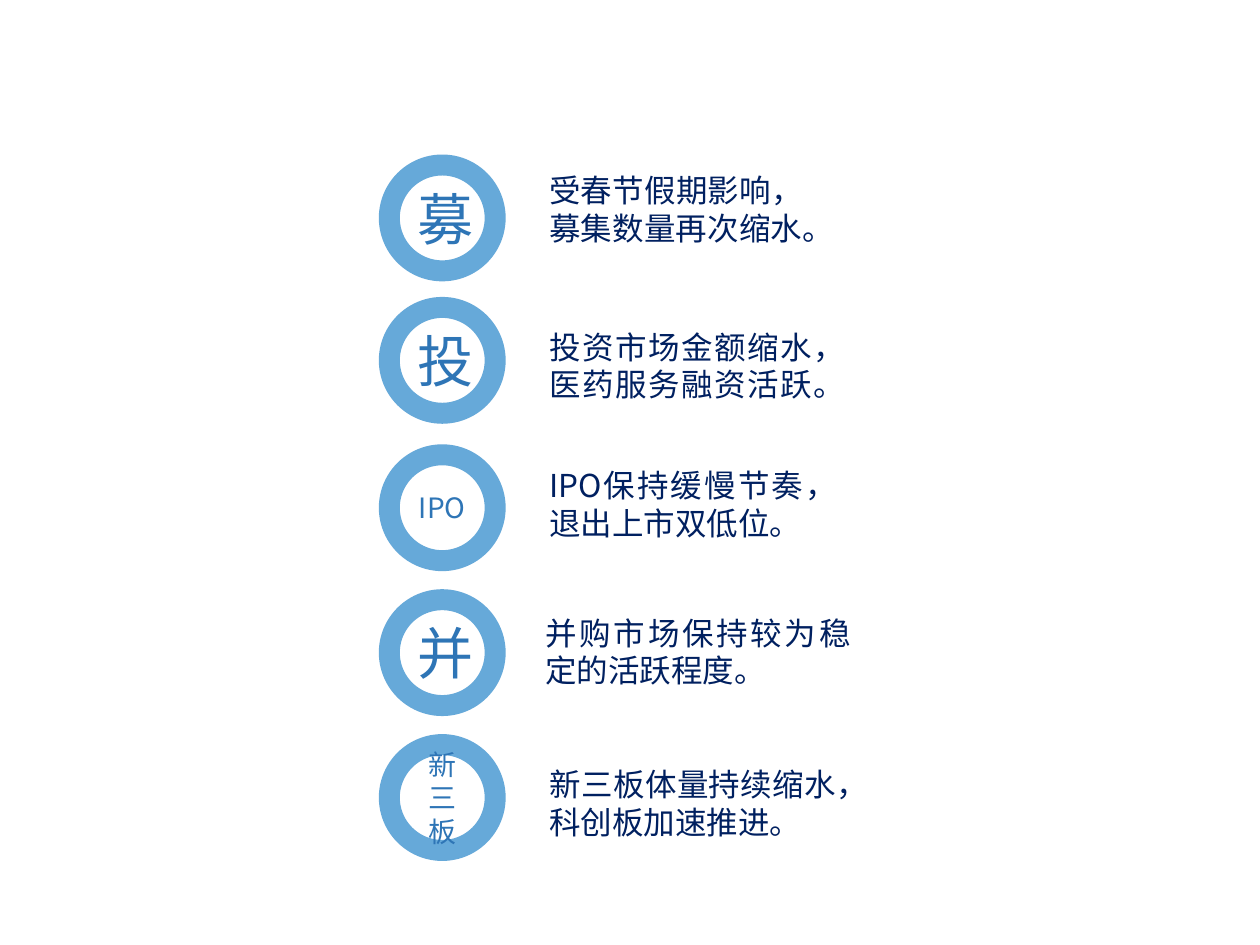
from dataclasses import dataclass

from lxml.etree import SubElement
from pptx import Presentation
from pptx.dml.color import RGBColor
from pptx.enum.lang import MSO_LANGUAGE_ID
from pptx.enum.shapes import MSO_SHAPE
from pptx.enum.text import MSO_ANCHOR, MSO_AUTO_SIZE, PP_ALIGN
from pptx.oxml.ns import qn
from pptx.util import Inches, Pt


@dataclass(frozen=True)
class Theme:
    ring: RGBColor = RGBColor(0x00, 0x70, 0xC0)
    ring_opacity: int = 60
    ring_width: int = 12
    label: RGBColor = RGBColor(0x2E, 0x75, 0xB6)
    label_font: str = "Noto Sans CJK JP"
    label_size: int = 32
    word_size: int = 16
    body: RGBColor = RGBColor(0x00, 0x20, 0x60)
    body_font: str = "Noto Sans CJK SC"
    body_size: int = 18


THEME = Theme()
RING_LEFT, RING_SIZE = 3.09, 0.84
NOTE_HEIGHT = 0.71

# label, ring top, note, note left, note top, note width
TOPICS = [
    ("募", 1.31, "受春节假期影响，募集数量再次缩水。", 4.26, 1.31, 2.21),
    ("投", 2.44, "投资市场金额缩水，医药服务融资活跃。", 4.26, 2.55, 2.3),
    ("IPO", 3.61, "IPO保持缓慢节奏，退出上市双低位。", 4.26, 3.65, 2.48),
    ("并", 4.76, "并购市场保持较为稳定的活跃程度。", 4.23, 4.82, 2.62),
    ("新三板", 5.91, "新三板体量持续缩水，科创板加速推进。", 4.26, 6.02, 2.48),
]


def write(tf, text, font, size, color, align):
    """Fill the frame with one run, using the font for Latin and Chinese."""
    tf.word_wrap = True
    p = tf.paragraphs[0]
    p.alignment = align
    r = p.add_run()
    r.text = text
    r.font.name = font
    r.font.size = Pt(size)
    r.font.color.rgb = color
    r.font.language_id = MSO_LANGUAGE_ID.SIMPLIFIED_CHINESE
    SubElement(r.font._element, qn("a:ea"), typeface=font)


def add_ring(s, label, top):
    sp = s.shapes.add_shape(MSO_SHAPE.OVAL, Inches(RING_LEFT), Inches(top),
                            Inches(RING_SIZE), Inches(RING_SIZE))
    sp.shadow.inherit = False
    sp.fill.background()
    sp.line.width = Pt(THEME.ring_width)
    sp.line.color.rgb = THEME.ring
    color = sp.line._ln.find(".//" + qn("a:srgbClr"))
    SubElement(color, qn("a:alpha"), val=str(THEME.ring_opacity * 1000))
    sp.text_frame.vertical_anchor = MSO_ANCHOR.MIDDLE
    size = THEME.label_size if len(label) == 1 else THEME.word_size
    write(sp.text_frame, label, THEME.label_font, size, THEME.label,
          PP_ALIGN.CENTER)


def add_note(s, text, left, top, width):
    sp = s.shapes.add_textbox(Inches(left), Inches(top), Inches(width),
                              Inches(NOTE_HEIGHT))
    write(sp.text_frame, text, THEME.body_font, THEME.body_size, THEME.body,
          PP_ALIGN.JUSTIFY)
    sp.text_frame.auto_size = MSO_AUTO_SIZE.SHAPE_TO_FIT_TEXT


def main():
    prs = Presentation()
    prs.slide_width, prs.slide_height = Inches(10), Inches(7.5)
    s = prs.slides.add_slide(prs.slide_layouts[6])
    for label, ring_top, note, left, top, width in TOPICS:
        add_ring(s, label, ring_top)
        add_note(s, note, left, top, width)
    prs.save("out.pptx")


if __name__ == "__main__":
    main()
